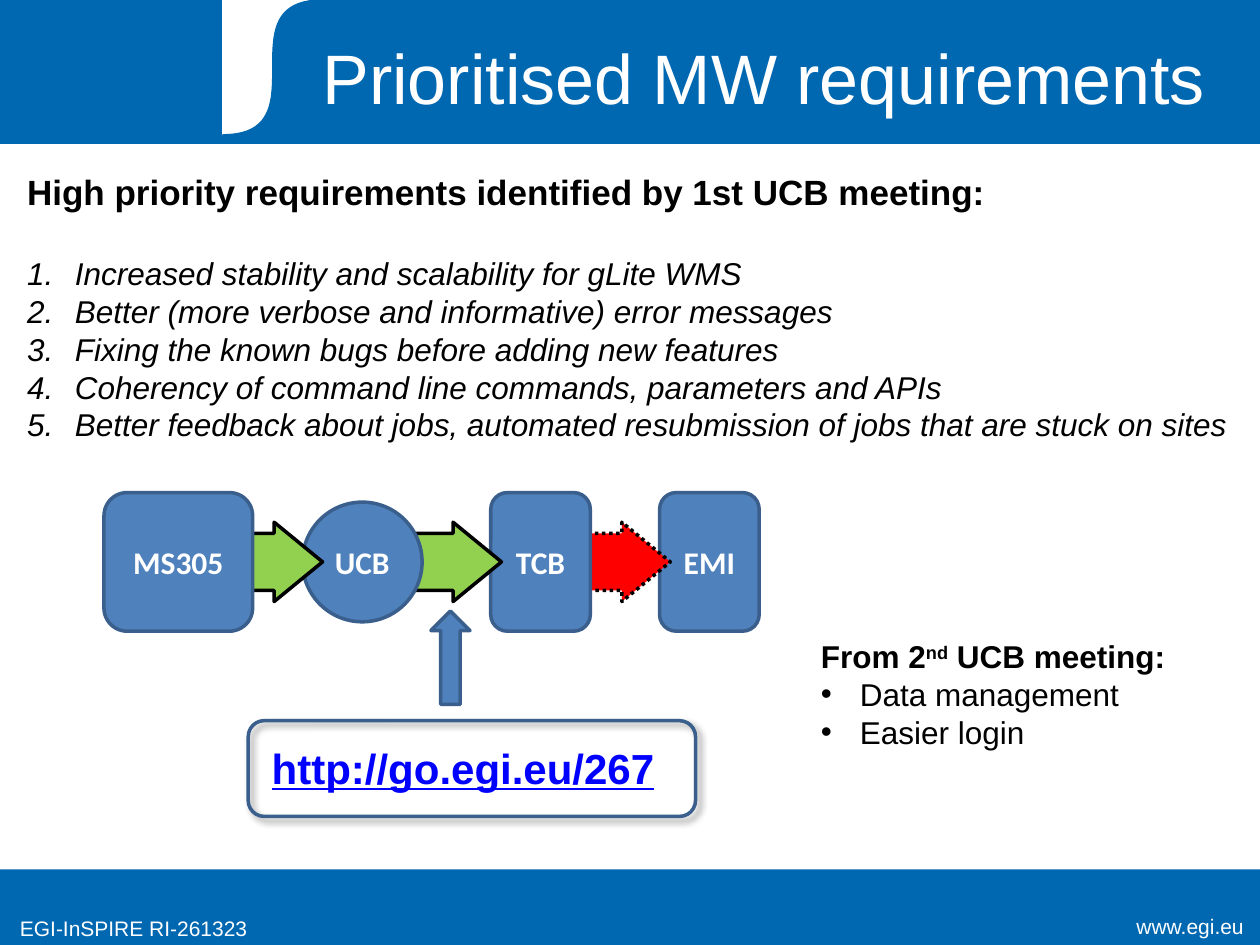
import pptx
import pptx.util
import pptx.dml.color
import pptx.enum.dml
import pptx.enum.shapes
import pptx.enum.text
import pptx.oxml
import pptx.oxml.ns

Pt = pptx.util.Pt
RGB = pptx.dml.color.RGBColor.from_string
Kind = pptx.enum.shapes.MSO_SHAPE
Align = pptx.enum.text.PP_ALIGN
Anchor = pptx.enum.text.MSO_ANCHOR


class Theme:
    blue, white, black = "0067B1", "FFFFFF", "000000"
    box, edge = "4F81BD", "3A5F8C"
    done, wait, link = "92D050", "FF0000", "0000FF"
    sans, label = "Arial", "Calibri"
    title, lead, url, body, foot = 40, 20, 24, 18, 12


deck = pptx.Presentation()
deck.slide_width, deck.slide_height = pptx.util.Inches(10), pptx.util.Inches(7.5)
slide = deck.slides.add_slide(deck.slide_layouts.get_by_name("Two Content"))
cell = deck.slide_width // 100  # grid of 100 columns by 75 rows


def draw(kind, x, y, w, h, fill=None, line=None, width=0.75):
    """Add a preset shape placed in grid cells."""
    shape = slide.shapes.add_shape(kind, *(round(n * cell) for n in (x, y, w, h)))
    shape.shadow.inherit = False
    if fill:
        shape.fill.solid()
        shape.fill.fore_color.rgb = RGB(fill)
    else:
        shape.fill.background()
    if line:
        shape.line.color.rgb = RGB(line)
        shape.line.width = Pt(width)
    else:
        shape.line.fill.background()
    return shape


def write(para, text, size, color=Theme.black, face=Theme.sans, bold=False, slant=False):
    run = para.add_run()
    run.text = text
    font = run.font
    font.name, font.size, font.bold, font.italic = face, Pt(size), bold, slant
    font.color.rgb = RGB(color)
    return run


# Header and footer bands, with the white swoosh
draw(Kind.RECTANGLE, 0, 69, 100, 6, Theme.blue)
draw(Kind.RECTANGLE, 0, 0, 100, 11.4, Theme.blue, Theme.blue)
draw(Kind.RECTANGLE, 17.7, 0, 19.7, 10.7, Theme.white, Theme.white)

ends = (17.7, 10.7), (25.6, 10.7), (17.7, 0), (25.6, 0)
curve = []
for step in range(41):
    t = step / 40
    mix = (1 - t) ** 3, 3 * t * (1 - t) ** 2, 3 * t * t * (1 - t), t ** 3
    curve.append(tuple(sum(m * p[axis] for m, p in zip(mix, ends)) for axis in (0, 1)))
outline = [(round(x * cell), round(y * cell)) for x, y in [(37.4, 0), (37.4, 10.7)] + curve]
pen = slide.shapes.build_freeform(*outline[0])
pen.add_line_segments(outline[1:], close=True)
sweep = pen.convert_to_shape()
sweep.shadow.inherit = False
sweep.fill.solid()
sweep.fill.fore_color.rgb = RGB(Theme.blue)
sweep.line.color.rgb = RGB(Theme.blue)
sweep.line.width = Pt(0.75)

# Plain text boxes: footers and web address
for text, x, y, w, h, size, color, align in (
    ("www.egi.eu", 83.9, 72, 15.8, 3.1, Theme.foot, Theme.white, Align.RIGHT),
    ("EGI-InSPIRE RI-261323", 0.6, 72.2, 25, 3.1, Theme.foot, Theme.white, Align.LEFT),
    ("http://go.egi.eu/267", 18.2, 58.4, 37.1, 7.5, Theme.url, Theme.link, Align.CENTER),
):
    # Footer boxes hug their single line and so end within the slide
    note = slide.shapes.add_textbox(*(round(n * cell) for n in (x, y, w, min(h, 75 - y))))
    note.text_frame.word_wrap = True
    para = note.text_frame.paragraphs[0]
    para.alignment = align
    run = write(para, text, size, color, bold=size == Theme.url)
    run.font.underline = size == Theme.url

# Title and the two lists, brought in front of the bands
title, main, side = slide.placeholders
for holder, area in (
    (title, (23.2, 1.3, 74.8, 9.5)),
    (main, (1.15, 13, 98.1, 22.9)),
    (side, (64.15, 50.05, 31.2, 10.1)),
):
    slide.shapes._spTree.append(holder._element)
    holder.left, holder.top, holder.width, holder.height = (round(n * cell) for n in area)
    holder.text_frame.auto_size = pptx.enum.text.MSO_AUTO_SIZE.NONE
    holder.text_frame.word_wrap = holder is not main
title.text_frame.vertical_anchor = Anchor.MIDDLE
head = title.text_frame.paragraphs[0]
head.alignment = Align.CENTER
write(head, "Prioritised MW requirements", Theme.title, Theme.white)

for holder, lead, items, mark, indent, gap, slant in (
    (main, ["High priority requirements identified by 1st UCB meeting:"], [
        "Increased stability and scalability for gLite WMS",
        "Better (more verbose and informative) error messages",
        "Fixing the known bugs before adding new features",
        "Coherency of command line commands, parameters and APIs",
        "Better feedback about jobs, automated resubmission of jobs that are stuck on sites",
    ], ("buAutoNum", "type", "arabicPeriod"), 3.8, 24, True),
    (side, ["From 2", "nd", " UCB meeting:"], ["Data management", "Easier login"],
     ("buChar", "char", "•"), 3.1, 0, False),
):
    frame = holder.text_frame
    for row, parts in enumerate([lead] + [[item] for item in items]):
        para = frame.add_paragraph() if row else frame.paragraphs[0]
        props = para._p.get_or_add_pPr()
        hang = round(indent * cell) if row else 0
        props.set("marL", str(hang))
        props.set("indent", str(-hang))
        tag, key, value = mark if row else ("buNone", None, None)
        if row:
            face = pptx.oxml.ns.qn("a:buFont")
            props.append(props.makeelement(face, {"typeface": Theme.sans}))
        bullet = props.makeelement(pptx.oxml.ns.qn("a:" + tag), {key: value} if key else {})
        props.append(bullet)
        para.space_before = Pt(gap if row == 1 else 0)
        size = Theme.lead if holder is main and not row else Theme.body
        for part in parts:
            run = write(para, part, size, bold=not row, slant=bool(row) and slant)
            if part == "nd":
                run._r.get_or_add_rPr().set("baseline", "30000")

# Process chain, from its far end forward; all steps share one centre line
axis = 44.6
for kind, x, w, h, fill, text in (
    (Kind.ROUNDED_RECTANGLE, 52.35, 7.9, 11, Theme.box, "EMI"),
    (Kind.RIGHT_ARROW, 46.1, 7.1, 6.3, Theme.wait, ""),
    (Kind.ROUNDED_RECTANGLE, 38.95, 7.9, 11, Theme.box, "TCB"),
    (Kind.RIGHT_ARROW, 32.7, 7.1, 6.3, Theme.done, ""),
    (Kind.OVAL, 24, 9.5, 9.5, Theme.box, "UCB"),
    (Kind.RIGHT_ARROW, 18.5, 7.1, 6.3, Theme.done, ""),
    (Kind.ROUNDED_RECTANGLE, 8.25, 11.8, 11, Theme.box, "MS305"),
):
    step = draw(kind, x, axis - h / 2, w, h, fill, Theme.edge if text else Theme.black, 2)
    if text:
        step.text_frame.vertical_anchor = Anchor.MIDDLE
        para = step.text_frame.paragraphs[0]
        para.alignment = Align.CENTER
        write(para, text, Theme.body, Theme.white, Theme.label, bold=True)
    else:
        step.adjustments[0], step.adjustments[1] = 0.72, 0.61
        if fill == Theme.wait:
            step.line.dash_style = pptx.enum.dml.MSO_LINE.ROUND_DOT

# Framed address and the arrow rising from it
frame = draw(Kind.ROUNDED_RECTANGLE, 19.7, 57.2, 35.5, 7.6, None, Theme.edge, 2)
glow = frame._element.spPr.find(pptx.oxml.ns.qn("a:effectLst"))
glow.append(pptx.oxml.parse_xml(
    f'<a:outerShdw {pptx.oxml.ns.nsdecls("a")} blurRad="{Pt(4)}" dist="{Pt(3)}" '
    f'dir="2700000" algn="tl" rotWithShape="0"><a:srgbClr val="{Theme.black}">'
    '<a:alpha val="40000"/></a:srgbClr></a:outerShdw>'))
draw(Kind.UP_ARROW, 34.2, 48.5, 3.1, 7.4, Theme.box, Theme.edge, 2)

deck.save("out.pptx")
